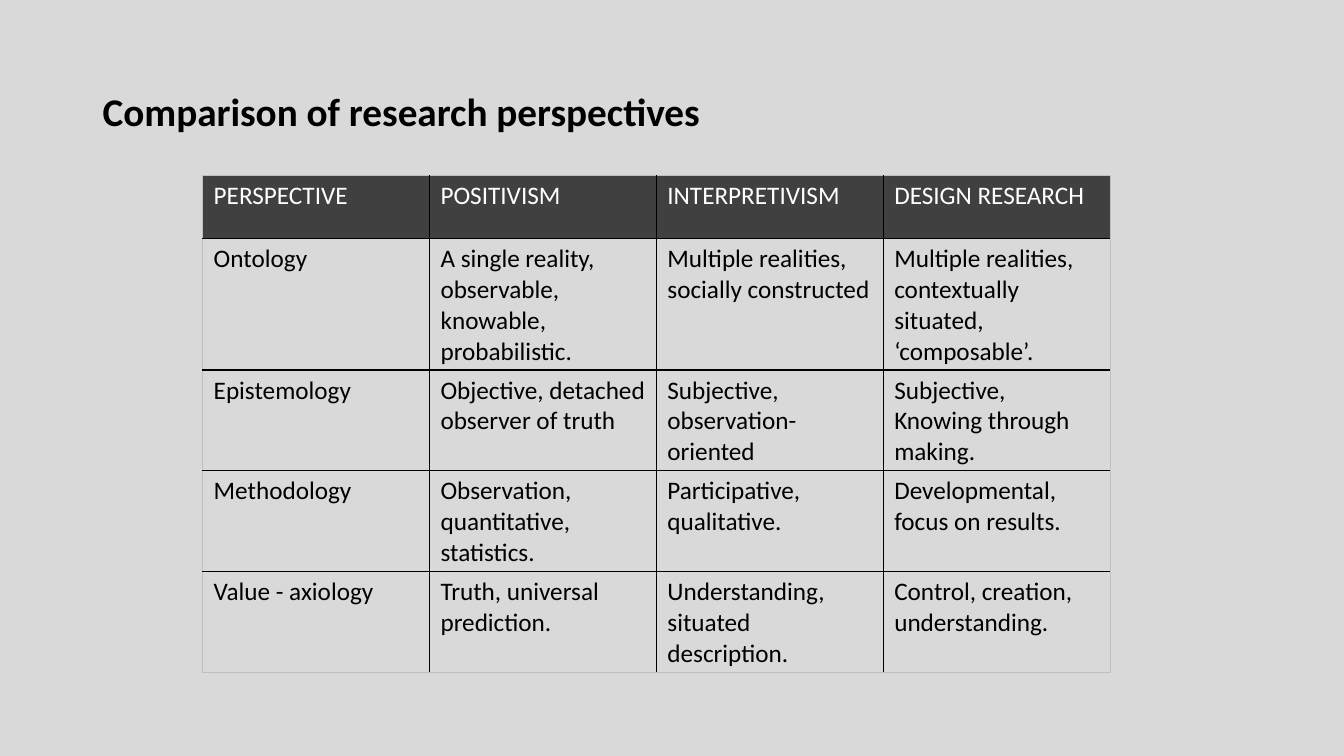
import pptx
import pptx.util
import pptx.dml.color
import pptx.enum.text
import pptx.oxml
import pptx.oxml.ns

Inch = pptx.util.Inches
Pt = pptx.util.Pt
HUES = {"back": "D9D9D9", "head": "404040", "ink": "000000",
        "light": "FFFFFF", "edge": "BFBFBF"}
ROWS = [
    ["PERSPECTIVE", "POSITIVISM", "INTERPRETIVISM", "DESIGN RESEARCH"],
    ["Ontology", "A single reality,\nobservable, knowable, probabilistic.",
     "Multiple realities, socially constructed",
     "Multiple realities, contextually situated, ‘composable’."],
    ["Epistemology", "Objective, detached observer of truth",
     "Subjective, observation-oriented",
     "Subjective,\nKnowing through making."],
    ["Methodology", "Observation, quantitative, statistics.",
     "Participative, qualitative.", "Developmental, focus on results."],
    ["Value - axiology", "Truth, universal prediction.",
     "Understanding, situated description.",
     "Control, creation, understanding."],
]
TALL = [0.63, 1.3, 0.7, 0.7, 0.7]
WIDE = 2.25


def write(frame, text, size, hue, bold=False):
    for i, line in enumerate(text.split("\n")):
        para = frame.add_paragraph() if i else frame.paragraphs[0]
        run = para.add_run()
        run.text = line
        run.font.name = "Calibri"
        run.font.size = Pt(size)
        run.font.bold = bold
        run.font.color.rgb = pptx.dml.color.RGBColor.from_string(HUES[hue])


def border(cell, sides):
    props = cell._tc.get_or_add_tcPr()
    for i, (side, inner) in enumerate(sides):
        hue, width = ("ink", Pt(1)) if inner else ("edge", Pt(0.5))
        props.insert(i, pptx.oxml.parse_xml(
            f'<a:ln{side} {pptx.oxml.ns.nsdecls("a")} w="{width}"><a:solidFill>'
            f'<a:srgbClr val="{HUES[hue]}"/></a:solidFill></a:ln{side}>'))


deck = pptx.Presentation()
deck.slide_width = Inch(13.33)
deck.slide_height = Inch(7.5)
slide = deck.slides.add_slide(deck.slide_layouts[6])
slide.background.fill.solid()
slide.background.fill.fore_color.rgb = pptx.dml.color.RGBColor.from_string(HUES["back"])

title = slide.shapes.add_textbox(Inch(0.92), Inch(0.4), Inch(11.5), Inch(1.45))
title.text_frame.word_wrap = True
title.text_frame.vertical_anchor = pptx.enum.text.MSO_ANCHOR.MIDDLE
write(title.text_frame, "Comparison of research perspectives", 28, "ink", True)
title.text_frame.paragraphs[0].line_spacing = 0.9

count = len(ROWS[0])
table = slide.shapes.add_table(len(ROWS), count, Inch(2.01), Inch(1.74),
                               Inch(WIDE * count), Inch(sum(TALL))).table
table.first_row = False
table.horz_banding = False
for col in table.columns:
    col.width = Inch(WIDE)
for r, texts in enumerate(ROWS):
    table.rows[r].height = Inch(TALL[r])
    for c, text in enumerate(texts):
        cell = table.cell(r, c)
        cell.margin_left = cell.margin_right = Inch(0.11)
        cell.margin_top = cell.margin_bottom = Inch(0.05)
        write(cell.text_frame, text, 18, "ink" if r else "light")
        if r:
            cell.fill.background()
        else:
            cell.fill.solid()
            cell.fill.fore_color.rgb = pptx.dml.color.RGBColor.from_string(HUES["head"])
        border(cell, [("L", c > 0), ("R", c < count - 1),
                      ("T", r > 0), ("B", r < len(ROWS) - 1)])

deck.save("out.pptx")
